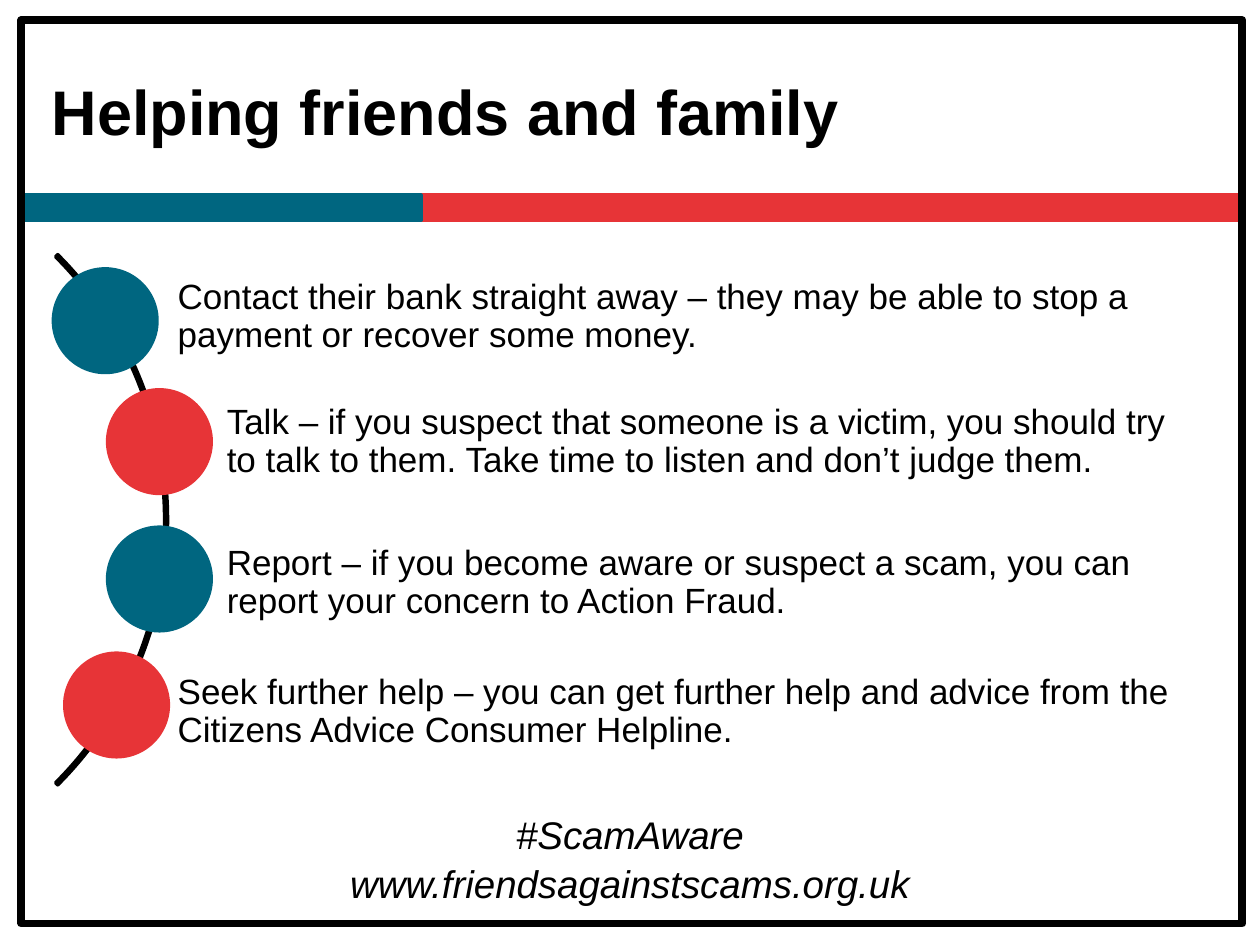
from dataclasses import dataclass
from pptx import Presentation
from pptx.dml.color import RGBColor as RGB
from pptx.enum.shapes import MSO_SHAPE as Shape
from pptx.enum.text import MSO_ANCHOR as Anchor, MSO_AUTO_SIZE as Fit, PP_ALIGN as Align
from pptx.util import Inches, Pt


@dataclass(frozen=True)
class Theme:
    font: str = "Arial"
    ink: RGB = RGB(0, 0, 0)
    teal: RGB = RGB(0x00, 0x66, 0x80)
    red: RGB = RGB(0xE7, 0x34, 0x37)
    head: int = 36
    body: int = 20
    foot: int = 22
    rule: float = 2
    frame: float = 4.5


class Deck:
    def __init__(self, theme):
        self.theme = theme
        self.file = Presentation()
        self.file.slide_width = Inches(10)
        self.file.slide_height = Inches(7.5)
        self.slide = self.file.slides.add_slide(self.file.slide_layouts[5])

    def words(self, para, text, size, bold=False, italic=False):
        run = para.add_run()
        run.text = text
        font = run.font
        font.name = self.theme.font
        font.size = Pt(size)
        font.bold = bold
        font.italic = italic
        font.color.rgb = self.theme.ink

    def title(self, box, text):
        title = self.slide.shapes.title
        title.left, title.top, title.width, title.height = map(Inches, box)
        frame = title.text_frame
        frame.word_wrap = True
        frame.vertical_anchor = Anchor.MIDDLE
        para = frame.paragraphs[0]
        para.alignment = Align.LEFT
        self.words(para, text, self.theme.head, bold=True)

    def shape(self, kind, box, fill=None, line=None, width=0):
        shape = self.slide.shapes.add_shape(kind, *map(Inches, box))
        shape.shadow.inherit = False
        if fill is None:
            shape.fill.background()
        else:
            shape.fill.solid()
            shape.fill.fore_color.rgb = fill
        if line is None:
            shape.line.fill.background()
        else:
            shape.line.color.rgb = line
            shape.line.width = Pt(width)
        return shape

    def arc(self, box, turns):
        arc = self.shape(Shape.BLOCK_ARC, box, None, self.theme.ink, self.theme.rule)
        for spot, turn in enumerate(turns):
            arc.adjustments[spot] = turn

    def point(self, box, text):
        frame = self.slide.shapes.add_textbox(*map(Inches, box)).text_frame
        frame.word_wrap = True
        frame.vertical_anchor = Anchor.MIDDLE
        frame.margin_left = Inches(0.54)
        frame.margin_right = frame.margin_top = frame.margin_bottom = Inches(0.06)
        para = frame.paragraphs[0]
        para.line_spacing = 0.9
        self.words(para, text, self.theme.body)

    def footer(self, top, text):
        box = (0, top, 10, 0.47)
        frame = self.slide.shapes.add_textbox(*map(Inches, box)).text_frame
        frame.word_wrap = True
        frame.auto_size = Fit.SHAPE_TO_FIT_TEXT
        para = frame.paragraphs[0]
        para.alignment = Align.CENTER
        self.words(para, text, self.theme.foot, italic=True)


def main():
    theme = Theme()
    deck = Deck(theme)
    deck.title((0.31, 0.25, 9.42, 1.25), "Helping friends and family")

    for left, width, tone in ((0.42, 9.44, theme.red), (0.17, 3.17, theme.teal)):
        deck.shape(Shape.RECTANGLE, (left, 1.55, width, 0.2), tone, tone, theme.rule)
    deck.shape(Shape.RECTANGLE, (0.17, 0.16, 9.69, 7.17), None, theme.ink, theme.frame)

    deck.footer(6.39, "#ScamAware")
    deck.footer(6.78, "www.friendsagainstscams.org.uk")

    deck.arc((-4.62, 1.15, 5.95, 5.95), (189, 27, 0.004))
    right, dot = 9.6, 0.85
    steps = (
        (0.87, 2.18, 0.41, 2.12, "Contact their bank straight away – they may be able "
         "to stop a payment or recover some money."),
        (1.26, 3.17, 0.84, 3.08, "Talk – if you suspect that someone is a victim, you "
         "should try to talk to them. Take time to listen and don’t judge them."),
        (1.26, 4.29, 0.84, 4.17, "Report – if you become aware or suspect a scam, you "
         "can report your concern to Action Fraud."),
        (0.87, 5.31, 0.5, 5.17, "Seek further help – you can get further help and "
         "advice from the Citizens Advice Consumer Helpline."),
    )
    tones = (theme.teal, theme.red)
    for step, (left, top, dot_x, dot_y, text) in enumerate(steps):
        deck.point((left, top, right - left, 0.68), text)
        deck.shape(Shape.OVAL, (dot_x, dot_y, dot, dot), tones[step % 2])

    deck.file.save("out.pptx")


if __name__ == "__main__":
    main()
